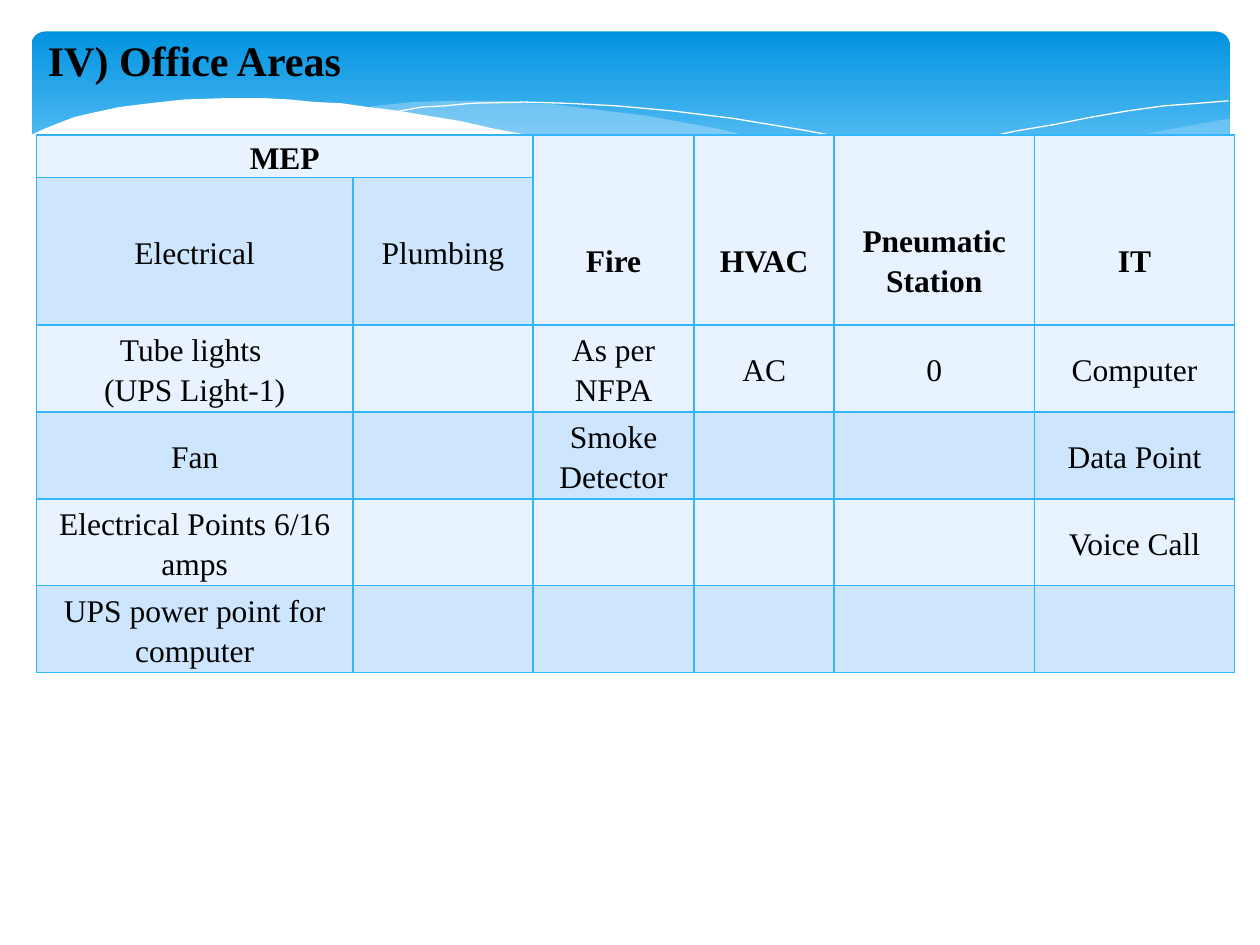
from lxml.etree import SubElement
from pptx import Presentation
from pptx.dml.color import RGBColor
from pptx.enum.shapes import MSO_SHAPE
from pptx.enum.text import MSO_ANCHOR, PP_ALIGN
from pptx.oxml.ns import qn
from pptx.util import Inches, Pt

FONT = "Times New Roman"
BLACK = RGBColor(0x00, 0x00, 0x00)
WHITE = RGBColor(0xFF, 0xFF, 0xFF)
BAND_TOP = RGBColor(0x02, 0x93, 0xE0)
BAND_BOTTOM = RGBColor(0x83, 0xD3, 0xFE)
MIST = RGBColor(0xC6, 0xE7, 0xFC)
BORDER = RGBColor(0x31, 0xB6, 0xFD)
ROW_FILLS = [RGBColor(0xE8, 0xF3, 0xFF), RGBColor(0xCE, 0xE5, 0xFE)]

TITLE = "IV) Office Areas"
ROWS = [
    ["MEP", "", "Fire", "HVAC", "Pneumatic Station", "IT"],
    ["Electrical", "Plumbing", "", "", "", ""],
    ["Tube lights \n(UPS Light-1)", "", "As per NFPA", "AC", "0", "Computer"],
    ["Fan", "", "Smoke Detector", "", "", "Data Point"],
    ["Electrical Points 6/16 amps", "", "", "", "", "Voice Call"],
    ["UPS power point for computer", "", "", "", "", ""],
]
COLUMN_WIDTHS = [2.51, 1.43, 1.28, 1.11, 1.59, 1.59]
ROW_HEIGHTS = [0.34, 1.17] + [0.69] * 4
MERGES = [((0, 0), (0, 1))] + [((0, column), (1, column)) for column in range(2, 6)]
HEADER_DROP = 0.47

RIGHT_MIST = [
    (9.76, 0.94), (9.48, 0.99), (9.21, 1.04), (8.91, 1.1), (8.61, 1.18), (8.05, 1.31),
    (7.53, 1.43), (7.06, 1.52), (6.61, 1.6), (6.91, 1.64), (7.19, 1.67), (7.45, 1.69),
    (7.69, 1.71), (8.03, 1.72), (8.35, 1.72), (8.63, 1.7), (8.89, 1.66), (9.13, 1.62),
    (9.35, 1.56), (9.63, 1.47), (9.76, 1.41),
]
MIDDLE_MIST = [
    (8.93, 1.67), (8.66, 1.64), (8.07, 1.54), (7.41, 1.42), (6.68, 1.26), (6.29, 1.16),
    (5.98, 1.09), (5.69, 1.02), (5.41, 0.97), (5.14, 0.92), (4.89, 0.89), (4.65, 0.86),
    (4.42, 0.83), (4.2, 0.82), (3.99, 0.8), (3.61, 0.8), (3.28, 0.81), (2.99, 0.84),
    (2.86, 0.86), (3.23, 0.9), (3.62, 0.97), (4.04, 1.06), (4.49, 1.16), (5.3, 1.35),
    (5.84, 1.46), (6.34, 1.56), (6.8, 1.63), (7.22, 1.68), (7.61, 1.71), (8.07, 1.73),
    (8.48, 1.72),
]
LONG_CURVE = [
    (3.09, 0.9), (3.18, 0.88), (3.35, 0.85), (3.53, 0.84), (3.74, 0.82), (4.16, 0.81),
    (4.5, 0.82), (4.89, 0.84), (5.33, 0.88), (5.82, 0.94), (6.36, 1.03), (6.95, 1.14),
    (7.6, 1.28), (8.31, 1.45), (9.07, 1.66),
]
RIGHT_CURVE = [
    (6.13, 1.51), (6.53, 1.41), (6.95, 1.3), (7.48, 1.17), (8.06, 1.04), (8.36, 0.99),
    (8.66, 0.93), (8.95, 0.88), (9.24, 0.84), (9.51, 0.82), (9.75, 0.8),
]
WHITE_WAVE = [
    (9.77, 1.41), (9.5, 1.51), (9.2, 1.59), (8.87, 1.66), (8.5, 1.7), (8.09, 1.71),
    (7.61, 1.7), (7.08, 1.65), (6.48, 1.56), (5.79, 1.44), (5.03, 1.28), (4.47, 1.14),
    (4.18, 1.07), (3.91, 1.02), (3.65, 0.96), (3.4, 0.92), (3.16, 0.88), (2.92, 0.85),
    (2.71, 0.82), (2.5, 0.81), (2.3, 0.79), (2.11, 0.78), (1.77, 0.78), (1.46, 0.79),
    (1.19, 0.82), (0.95, 0.85), (0.76, 0.89), (0.59, 0.93), (0.46, 0.98), (0.36, 1.02),
    (0.25, 1.07), (0.23, 1.07), (0.23, 2.24), (9.77, 2.24),
]
WAVES = [
    (RIGHT_MIST, MIST, 29),
    (MIDDLE_MIST, MIST, 40),
    (LONG_CURVE, None, 100),
    (RIGHT_CURVE, None, 100),
    (WHITE_WAVE, WHITE, 100),
]


def add_band(slide):
    band = slide.shapes.add_shape(
        MSO_SHAPE.ROUNDED_RECTANGLE, Inches(0.25), Inches(0.25), Inches(9.51), Inches(1.56)
    )
    band.adjustments[0] = 0.07
    band.shadow.inherit = False
    band.line.fill.background()
    band.fill.gradient()
    band.fill.gradient_angle = 270
    for stop, color, position in zip(
        band.fill.gradient_stops, (BAND_TOP, BAND_BOTTOM), (0, 0.9)
    ):
        stop.color.rgb = color
        stop.position = position


def add_wave(slide, points, color, opacity):
    points = [(Inches(x), Inches(y)) for x, y in points]
    builder = slide.shapes.build_freeform(*points[0])
    builder.add_line_segments(points[1:], close=color is not None)
    wave = builder.convert_to_shape()
    wave.shadow.inherit = False
    if color is None:
        wave.fill.background()
        wave.line.color.rgb = WHITE
        wave.line.width = Pt(0)
        return
    wave.line.fill.background()
    wave.fill.solid()
    wave.fill.fore_color.rgb = color
    if opacity < 100:
        for node in wave.element.spPr.iter(qn("a:srgbClr")):
            SubElement(node, qn("a:alpha"), val=str(opacity * 1000))


def style_paragraph(paragraph, size, bold, alignment):
    paragraph.alignment = alignment
    font = paragraph.font
    font.name, font.size, font.bold = FONT, Pt(size), bold
    font.color.rgb = BLACK


def format_title(slide):
    title = slide.shapes.title
    title.left, title.top = Inches(0.28), Inches(0.22)
    title.width, title.height = Inches(4.96), Inches(0.5)
    title.text_frame.text = TITLE
    title.text_frame.vertical_anchor = MSO_ANCHOR.TOP
    style_paragraph(title.text_frame.paragraphs[0], 24, True, PP_ALIGN.LEFT)
    title.element.getparent().append(title.element)


def add_borders(cell):
    properties = cell._tc.get_or_add_tcPr()
    for side in ("lnL", "lnR", "lnT", "lnB"):
        line = SubElement(properties, qn(f"a:{side}"), w=str(Pt(1)))
        fill = SubElement(line, qn("a:solidFill"))
        SubElement(fill, qn("a:srgbClr"), val=str(BORDER))


def fill_cell(cell, text, row, column):
    add_borders(cell)
    cell.fill.solid()
    cell.fill.fore_color.rgb = ROW_FILLS[row % 2]
    cell.vertical_anchor = MSO_ANCHOR.MIDDLE
    cell.margin_left = cell.margin_right = Inches(0.07)
    cell.margin_top = Inches(HEADER_DROP if row == 0 and column > 1 else 0)
    cell.margin_bottom = 0
    paragraph = cell.text_frame.paragraphs[0]
    paragraph.text = text
    paragraph.line_spacing = 1.15
    paragraph.space_after = Pt(10)
    style_paragraph(paragraph, 18, row == 0, PP_ALIGN.CENTER)


def add_areas_table(slide):
    table = slide.shapes.add_table(
        len(ROWS), len(COLUMN_WIDTHS), Inches(0.29), Inches(1.07),
        Inches(sum(COLUMN_WIDTHS)), Inches(sum(ROW_HEIGHTS)),
    ).table
    table.first_row = table.horz_banding = False
    for column, width in zip(table.columns, COLUMN_WIDTHS):
        column.width = Inches(width)
    for row, height in zip(table.rows, ROW_HEIGHTS):
        row.height = Inches(height)
    for row, texts in enumerate(ROWS):
        for column, text in enumerate(texts):
            fill_cell(table.cell(row, column), text, row, column)
    for first, last in MERGES:
        table.cell(*first).merge(table.cell(*last))


def main():
    presentation = Presentation()
    presentation.slide_width, presentation.slide_height = Inches(10), Inches(7.5)
    slide = presentation.slides.add_slide(presentation.slide_layouts[5])
    add_band(slide)
    for points, color, opacity in WAVES:
        add_wave(slide, points, color, opacity)
    format_title(slide)
    add_areas_table(slide)
    presentation.save("out.pptx")


if __name__ == "__main__":
    main()
